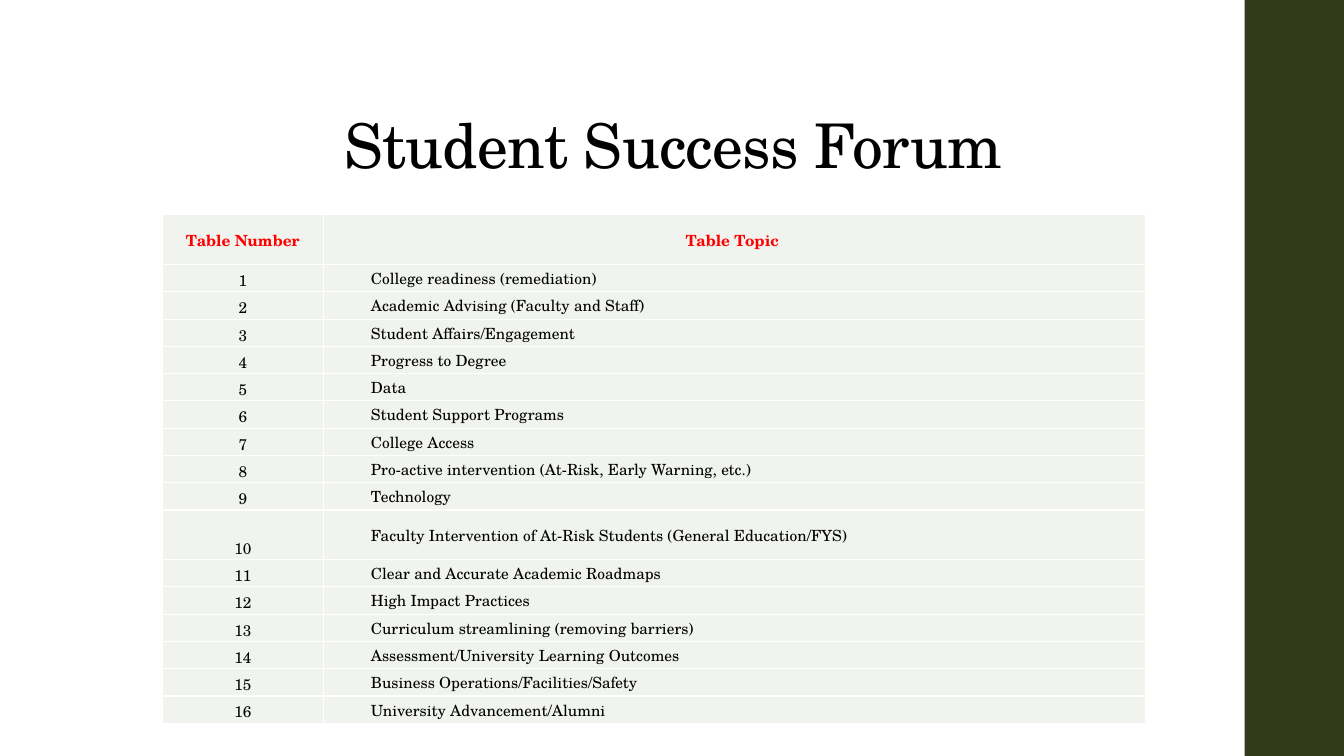
from dataclasses import dataclass

from lxml import etree
from pptx import Presentation
from pptx import util as u
from pptx.dml.color import RGBColor
from pptx.enum import shapes, text
from pptx.oxml import ns

EMU_PER_PX = 6350  # the slide is 1920 px wide
FONT = "TeX Gyre Schola"
BLACK = RGBColor(0x00, 0x00, 0x00)
RED = RGBColor(0xFF, 0x00, 0x00)
WHITE = RGBColor(0xFF, 0xFF, 0xFF)
OLIVE = RGBColor(0x33, 0x3A, 0x1C)
PALE_GREEN = RGBColor(0xF0, 0xF3, 0xEE)

COLUMN_WIDTHS = (230, 1175)
ROW_HEIGHT = 39
TALL_ROW_HEIGHT = 71
TALL_ROWS = (0, 10)
CELL_MARGIN = 1
TOPIC_INDENT = 68

HEADERS = ("Table Number", "Table Topic ")
TOPICS = (
    "College readiness (remediation)",
    "Academic Advising (Faculty and Staff)",
    "Student Affairs/Engagement",
    "Progress to Degree",
    "Data",
    "Student Support Programs",
    "College Access",
    "Pro-active intervention (At-Risk, Early Warning, etc.)",
    "Technology",
    "Faculty Intervention of At-Risk Students (General Education/FYS)",
    "Clear and Accurate Academic Roadmaps",
    "High Impact Practices",
    "Curriculum streamlining (removing barriers)",
    "Assessment/University Learning Outcomes",
    "Business Operations/Facilities/Safety",
    "University Advancement/Alumni",
)


@dataclass(frozen=True)
class CellStyle:
    alignment: text.PP_ALIGN
    anchor: text.MSO_ANCHOR
    left_margin: int = CELL_MARGIN
    color: RGBColor = BLACK
    bold: bool = False


HEADER = CellStyle(text.PP_ALIGN.CENTER, text.MSO_ANCHOR.MIDDLE, color=RED, bold=True)
NUMBER = CellStyle(text.PP_ALIGN.CENTER, text.MSO_ANCHOR.BOTTOM)
TOPIC = CellStyle(text.PP_ALIGN.LEFT, text.MSO_ANCHOR.MIDDLE, TOPIC_INDENT)


def px(length: int) -> u.Emu:
    return u.Emu(length * EMU_PER_PX)


def add_run(paragraph, words: str, size: int, color: RGBColor, bold: bool = False):
    run = paragraph.add_run()
    run.text = words
    run.font.name = FONT
    run.font.size = u.Pt(size)
    run.font.color.rgb = color
    run.font.bold = bold
    return run


def add_borders(cell) -> None:
    properties = cell._tc.get_or_add_tcPr()
    for index, side in enumerate(("lnL", "lnR", "lnT", "lnB")):
        line = etree.Element(ns.qn(f"a:{side}"), w=str(u.Pt(1)))
        fill = etree.SubElement(line, ns.qn("a:solidFill"))
        etree.SubElement(fill, ns.qn("a:srgbClr"), val=str(WHITE))
        properties.insert(index, line)


def fill_cell(cell, words: str, style: CellStyle) -> None:
    cell.fill.solid()
    cell.fill.fore_color.rgb = PALE_GREEN
    add_borders(cell)
    cell.vertical_anchor = style.anchor
    cell.margin_left = px(style.left_margin)
    cell.margin_right = cell.margin_top = px(CELL_MARGIN)
    cell.margin_bottom = 0
    paragraph = cell.text_frame.paragraphs[0]
    paragraph.alignment = style.alignment
    add_run(paragraph, words, 11, style.color, style.bold)


def add_side_bar(slide) -> None:
    bar = slide.shapes.add_shape(
        shapes.MSO_SHAPE.RECTANGLE, px(1778), 0, px(142), px(1080))
    bar.shadow.inherit = False
    bar.fill.solid()
    bar.fill.fore_color.rgb = OLIVE
    bar.line.fill.background()


def set_title(slide, words: str) -> None:
    title = slide.shapes.title
    title.left, title.top, title.width, title.height = map(px, (199, 58, 1526, 209))
    frame = title.text_frame
    frame.auto_size = text.MSO_AUTO_SIZE.NONE
    frame.vertical_anchor = text.MSO_ANCHOR.BOTTOM
    paragraph = frame.paragraphs[0]
    paragraph.alignment = text.PP_ALIGN.CENTER
    paragraph.line_spacing = 0.9
    run = add_run(paragraph, words, 44, BLACK)
    run.font._element.set("spc", "-50")


def add_topic_table(slide) -> None:
    heights = [TALL_ROW_HEIGHT if row in TALL_ROWS else ROW_HEIGHT
               for row in range(len(TOPICS) + 1)]
    table = slide.shapes.add_table(
        len(heights), len(COLUMN_WIDTHS), px(232), px(307),
        px(sum(COLUMN_WIDTHS)), px(sum(heights))).table
    for column, width in zip(table.columns, COLUMN_WIDTHS):
        column.width = px(width)
    for row, height in zip(table.rows, heights):
        row.height = px(height)

    for column, words in enumerate(HEADERS):
        fill_cell(table.cell(0, column), words, HEADER)
    for number, topic in enumerate(TOPICS, start=1):
        fill_cell(table.cell(number, 0), str(number), NUMBER)
        fill_cell(table.cell(number, 1), topic, TOPIC)


def main() -> None:
    presentation = Presentation()
    presentation.slide_width = px(1920)
    presentation.slide_height = px(1080)
    title_only = presentation.slide_layouts[5]
    slide = presentation.slides.add_slide(title_only)

    add_side_bar(slide)
    set_title(slide, "Student Success Forum")
    add_topic_table(slide)

    presentation.save("out.pptx")


if __name__ == "__main__":
    main()
